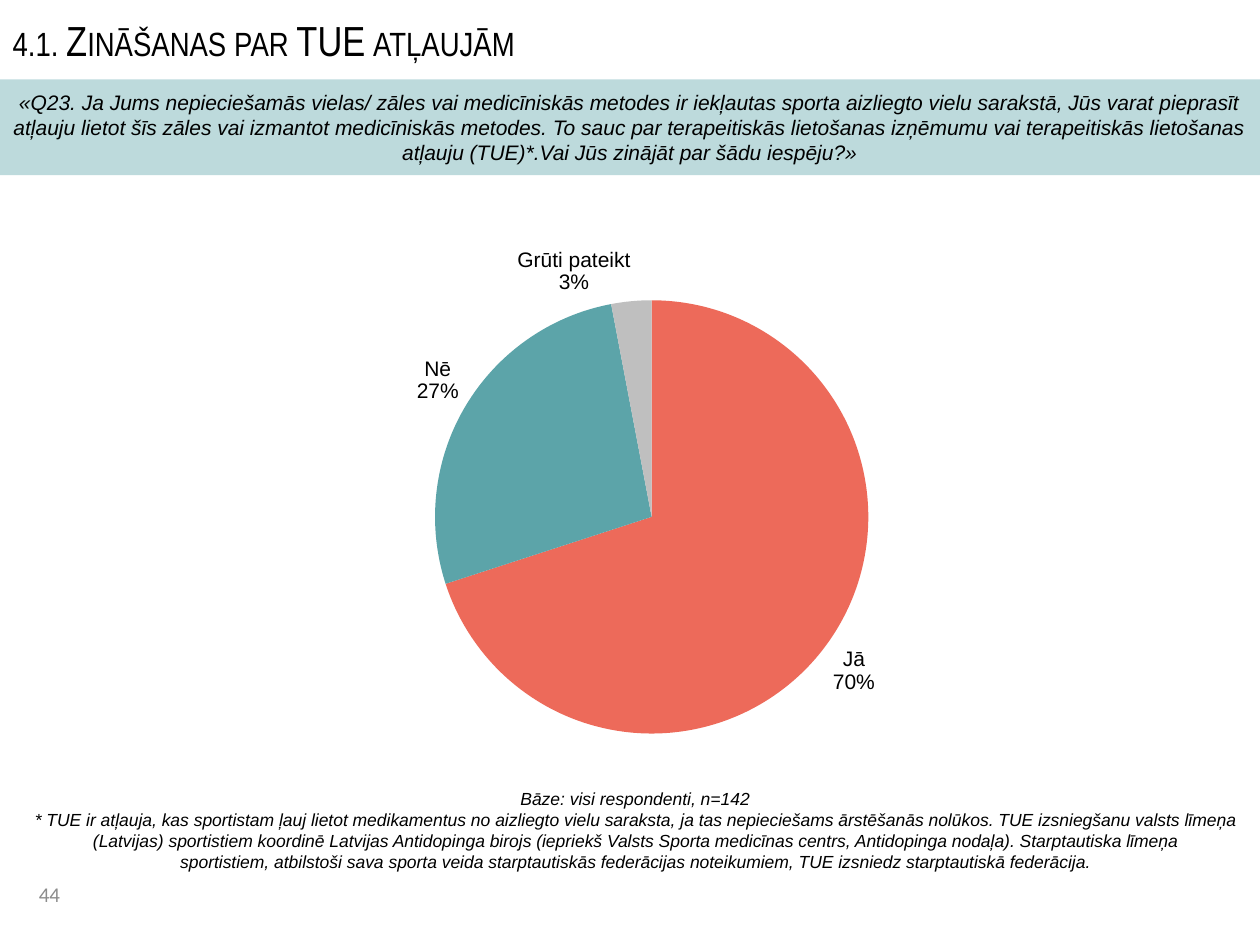
"""Build the slide on awareness of TUE permits, with a pie chart of the answers."""
from lxml.etree import SubElement
from pptx import Presentation
from pptx.chart.data import CategoryChartData
from pptx.dml.color import RGBColor
from pptx.enum.chart import XL_CHART_TYPE, XL_LABEL_POSITION
from pptx.enum.shapes import MSO_SHAPE
from pptx.enum.text import MSO_ANCHOR, PP_ALIGN
from pptx.oxml import parse_xml
from pptx.oxml.ns import nsdecls, qn
from pptx.util import Inches, Pt

BLACK = RGBColor(0x00, 0x00, 0x00)
TEAL = RGBColor(0x5C, 0xA4, 0xA9)
CORAL = RGBColor(0xED, 0x6A, 0x5A)
SILVER = RGBColor(0xBF, 0xBF, 0xBF)
GRAY = RGBColor(0x8C, 0x8C, 0x8C)

ANSWERS = [("Jā", 70, CORAL), ("Nē", 27, TEAL), ("Grūti pateikt", 3, SILVER)]
PLOT_AREA = {"x": 0.298, "y": 0.149, "w": 0.449, "h": 0.72}
QUESTION = (
    "«Q23. Ja Jums nepieciešamās vielas/ zāles vai medicīniskās metodes ir iekļautas sporta "
    "aizliegto vielu sarakstā, Jūs varat pieprasīt atļauju lietot šīs zāles vai izmantot "
    "medicīniskās metodes. To sauc par terapeitiskās lietošanas izņēmumu vai terapeitiskās "
    "lietošanas atļauju (TUE)*.Vai Jūs zinājāt par šādu iespēju?»"
)
FOOTNOTE = (
    "Bāze: visi respondenti, n=142\n"
    "* TUE ir atļauja, kas sportistam ļauj lietot medikamentus no aizliegto vielu saraksta, ja tas "
    "nepieciešams ārstēšanās nolūkos. TUE izsniegšanu valsts līmeņa\v"
    "(Latvijas) sportistiem koordinē Latvijas Antidopinga birojs (iepriekš Valsts Sporta medicīnas "
    "centrs, Antidopinga nodaļa). Starptautiska līmeņa\v"
    "sportistiem, atbilstoši sava sporta veida starptautiskās federācijas noteikumiem, TUE izsniedz "
    "starptautiskā federācija."
)


def place(shape, left, top, width, height):
    shape.left, shape.top = Inches(left), Inches(top)
    shape.width, shape.height = Inches(width), Inches(height)


def write(shape, text, name, size, color=BLACK, align=PP_ALIGN.CENTER, italic=True):
    frame = shape.text_frame
    frame.word_wrap = True
    frame.vertical_anchor = MSO_ANCHOR.MIDDLE
    frame.text = text
    for paragraph in frame.paragraphs:
        paragraph.alignment = align
        paragraph.font.name = name
        paragraph.font.size = Pt(size)
        paragraph.font.italic = italic
        paragraph.font.color.rgb = color


presentation = Presentation()
presentation.slide_width, presentation.slide_height = Inches(10), Inches(7.5)
slide = presentation.slides.add_slide(presentation.slide_layouts[5])

title = slide.shapes.title
place(title, 0, 0, 10, 0.63)
write(title, "4.1. Zināšanas par TUE atļaujām", "Arial Narrow", 24, align=PP_ALIGN.LEFT, italic=False)
title.text_frame.paragraphs[0].runs[0].font._element.set("cap", "small")

banner = slide.shapes.add_shape(MSO_SHAPE.RECTANGLE, 0, 0, 0, 0)
place(banner, 0, 0.63, 10, 0.76)
banner.shadow.inherit = False
banner.line.fill.background()
banner.fill.solid()
banner.fill.fore_color.rgb = TEAL
banner_color = banner._element.spPr.find(".//" + qn("a:srgbClr"))
SubElement(banner_color, qn("a:alpha"), val="40000")
write(banner, QUESTION, "Arial", 12)

chart_data = CategoryChartData()
chart_data.categories = [answer for answer, share, color in ANSWERS]
chart_data.add_series("Series 1", [share for answer, share, color in ANSWERS])
chart_frame = slide.shapes.add_chart(XL_CHART_TYPE.PIE, 0, 0, Inches(1), Inches(1), chart_data)
place(chart_frame, 1.17, 1.67, 7.66, 4.78)
chart = chart_frame.chart
chart.has_title = False
chart.has_legend = False
chart.font.name = "Arial"
chart.font.size = Pt(10)
chart.font.color.rgb = BLACK

series = chart.plots[0].series[0]
for index, (answer, share, color) in enumerate(ANSWERS):
    fill = series.points[index].format.fill
    fill.solid()
    fill.fore_color.rgb = color

labels = series.data_labels
labels.show_category_name = True
labels.show_percentage = True
labels.show_value = False
labels.number_format = "0%"
labels.number_format_is_linked = False
labels.position = XL_LABEL_POSITION.OUTSIDE_END
labels.font.name = "Arial"
labels.font.size = Pt(12)
labels.font.color.rgb = BLACK
separator = parse_xml(f"<c:separator {nsdecls('c')}>\n</c:separator>")
labels._element.find(qn("c:showBubbleSize")).addnext(separator)

plot_area = chart._chartSpace.chart.plotArea
for layout in plot_area.findall(qn("c:layout")):
    plot_area.remove(layout)
limits = "".join(f'<c:{side} val="{share}"/>' for side, share in PLOT_AREA.items())
plot_area.insert(0, parse_xml(
    f'<c:layout {nsdecls("c")}><c:manualLayout><c:layoutTarget val="inner"/>'
    f'<c:xMode val="edge"/><c:yMode val="edge"/>{limits}</c:manualLayout></c:layout>'
))

footnote = slide.shapes.add_textbox(0, 0, 0, 0)
place(footnote, 0.04, 6.35, 10, 0.47)
write(footnote, FOOTNOTE, "Arial", 10)

page_number = slide.shapes.add_textbox(0, 0, 0, 0)
place(page_number, 0.21, 6.95, 1.06, 0.4)
write(page_number, "44", "Calibri", 12, GRAY, PP_ALIGN.LEFT, italic=False)
page_number.text_frame.vertical_anchor = MSO_ANCHOR.TOP

presentation.save("out.pptx")
